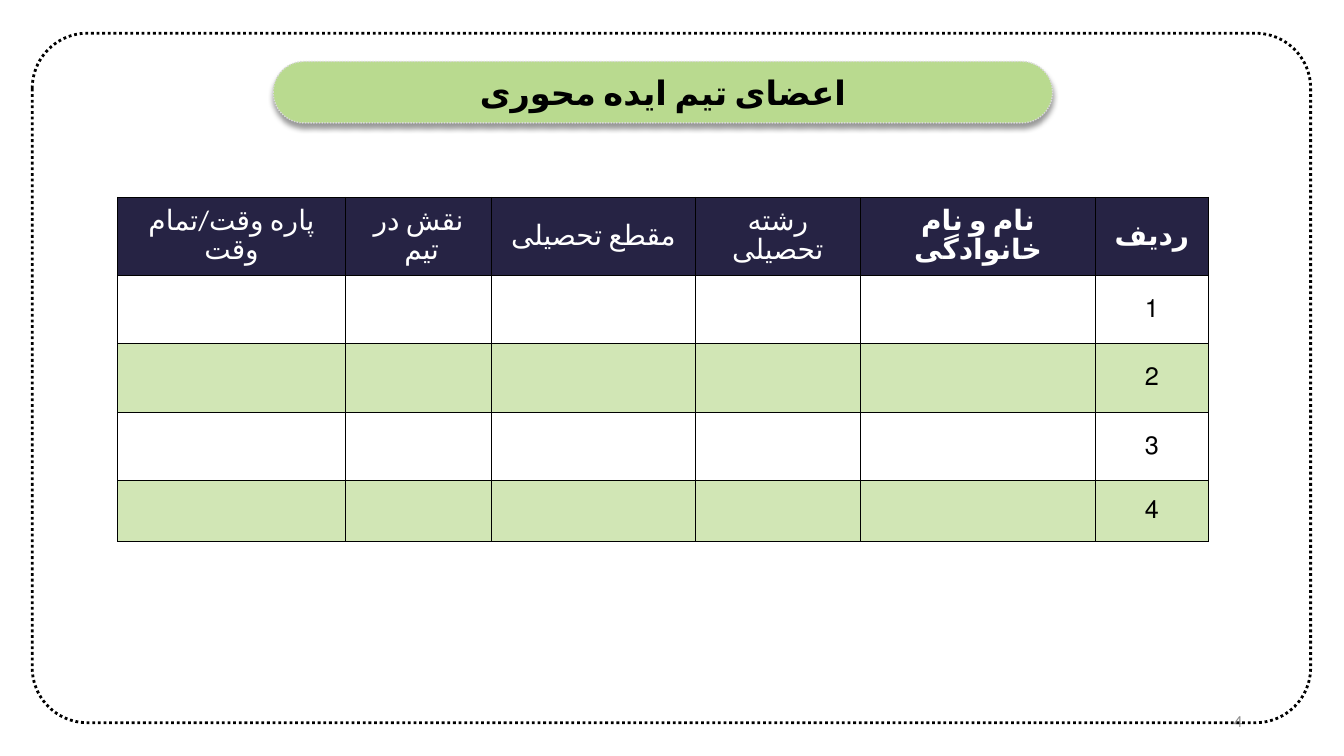
from dataclasses import dataclass

import lxml.etree
import pptx
import pptx.dml.color
import pptx.enum.dml
import pptx.enum.shapes
import pptx.enum.text
import pptx.oxml
import pptx.oxml.ns
import pptx.util

RGBColor = pptx.dml.color.RGBColor
BLACK = RGBColor(0x00, 0x00, 0x00)
WHITE = RGBColor(0xFF, 0xFF, 0xFF)
GREY = RGBColor(0x8C, 0x8C, 0x8C)
SILVER = RGBColor(0xD9, 0xD9, 0xD9)
GREEN = RGBColor(0xB9, 0xDA, 0x8F)
PALE_GREEN = RGBColor(0xD1, 0xE6, 0xB5)
NAVY = RGBColor(0x26, 0x23, 0x44)

FONT = "Calibri"
SLIDE_WIDTH = pptx.util.Inches(13.33)
SLIDE_HEIGHT = pptx.util.Inches(7.5)
ALIGN = pptx.enum.text.PP_ALIGN
MIDDLE = pptx.enum.text.MSO_ANCHOR.MIDDLE
DRAWING_NS = pptx.oxml.ns.nsdecls("a")


@dataclass(frozen=True)
class Area:
    """A rectangle in percent of the slide's width and height."""
    left: float
    top: float
    width: float
    height: float

    def emu(self) -> tuple[int, int, int, int]:
        return across(self.left), down(self.top), across(self.width), down(self.height)


@dataclass(frozen=True)
class Column:
    heading: str
    width: float
    bold: bool = False


TITLE_AREA = Area(20.33, 8.13, 57.99, 8.13)
NUMBER_AREA = Area(70.67, 92.67, 22.51, 5.33)
FRAME_AREA = Area(2.4, 4.4, 95.12, 91.2)
TEAM_AREA = Area(8.75, 26.13, 81.16, 45.48)
COLUMNS = [
    Column("پاره وقت/تمام وقت", 16.95),
    Column("نقش در تیم ", 10.88),
    Column("مقطع تحصیلی", 15.15),
    Column("رشته تحصیلی", 12.3),
    Column("نام و نام خانوادگی", 17.48, bold=True),
    Column("ردیف", 8.4, bold=True),
]
ROW_HEIGHTS = [10.27, 9.07, 9.07, 9.07, 8]


def across(percent: float) -> int:
    return round(SLIDE_WIDTH * percent / 100)


def down(percent: float) -> int:
    return round(SLIDE_HEIGHT * percent / 100)


def write(frame, text: str, *, size: float, color=BLACK, bold: bool = False,
          align=ALIGN.CENTER, rtl: bool = True, spacing: float = 1.0,
          persian: bool = False) -> None:
    paragraph = frame.paragraphs[0]
    paragraph.alignment = align
    paragraph.line_spacing = spacing
    if rtl:
        paragraph._p.get_or_add_pPr().set("rtl", "1")
    run = paragraph.add_run()
    run.text = text
    run.font.name = FONT
    run.font.size = pptx.util.Pt(size)
    run.font.bold = bold
    run.font.color.rgb = color
    if persian:
        run.font._element.set("lang", "fa-IR")
        lxml.etree.SubElement(
            run.font._element, pptx.oxml.ns.qn("a:cs")).set("typeface", FONT)


def add_rounded(slide, area: Area, corner: float, line: RGBColor, line_width: float):
    shape = slide.shapes.add_shape(
        pptx.enum.shapes.MSO_SHAPE.ROUNDED_RECTANGLE, *area.emu())
    shape.adjustments[0] = corner
    shape.shadow.inherit = False
    shape.fill.background()
    shape.line.color.rgb = line
    shape.line.width = pptx.util.Pt(line_width)
    shape.line.dash_style = pptx.enum.dml.MSO_LINE.ROUND_DOT
    return shape


def add_title(slide) -> None:
    banner = add_rounded(slide, TITLE_AREA, 0.5, SILVER, 1)
    banner.fill.solid()
    banner.fill.fore_color.rgb = GREEN
    # Soft shadow straight below
    effects = banner._element.spPr.find(pptx.oxml.ns.qn("a:effectLst"))
    effects.append(pptx.oxml.parse_xml(
        f'<a:outerShdw {DRAWING_NS} blurRad="50800" dist="38100" dir="5400000" '
        f'rotWithShape="0"><a:srgbClr val="{BLACK}"><a:alpha val="40000"/>'
        '</a:srgbClr></a:outerShdw>'))
    # Title text in front of its banner
    title = slide.shapes.title
    title.left, title.top, title.width, title.height = TITLE_AREA.emu()
    banner._element.addnext(title._element)
    title.text_frame.word_wrap = True
    title.text_frame.vertical_anchor = MIDDLE
    write(title.text_frame, "اعضای تیم ایده محوری", size=24, bold=True, persian=True)


def style_cell(cell, fill: RGBColor) -> None:
    cell.vertical_anchor = MIDDLE
    properties = cell._tc.get_or_add_tcPr()
    for side in ("lnL", "lnR", "lnT", "lnB"):
        properties.append(pptx.oxml.parse_xml(
            f'<a:{side} {DRAWING_NS} w="{pptx.util.Pt(1)}"><a:solidFill>'
            f'<a:srgbClr val="{BLACK}"/></a:solidFill></a:{side}>'))
    cell.fill.solid()
    cell.fill.fore_color.rgb = fill


def add_team_table(slide) -> None:
    team = slide.shapes.add_table(len(ROW_HEIGHTS), len(COLUMNS), *TEAM_AREA.emu()).table
    for row, height in zip(team.rows, ROW_HEIGHTS):
        row.height = down(height)
    for index, column in enumerate(COLUMNS):
        team.columns[index].width = across(column.width)
        heading = team.cell(0, index)
        style_cell(heading, NAVY)
        write(heading.text_frame, column.heading, size=20, color=WHITE,
              bold=column.bold, spacing=0.85, persian=True)
        for member in range(1, len(ROW_HEIGHTS)):
            style_cell(team.cell(member, index), WHITE if member % 2 else PALE_GREEN)
    # Member numbers in the last column
    for member in range(1, len(ROW_HEIGHTS)):
        write(team.cell(member, len(COLUMNS) - 1).text_frame, str(member), size=18)


def add_page_number(slide) -> None:
    page_number = slide.shapes.add_textbox(*NUMBER_AREA.emu()).text_frame
    page_number.word_wrap = True
    page_number.vertical_anchor = MIDDLE
    write(page_number, "4", size=12, color=GREY, align=ALIGN.RIGHT, rtl=False)


def main() -> None:
    deck = pptx.Presentation()
    deck.slide_width, deck.slide_height = SLIDE_WIDTH, SLIDE_HEIGHT
    slide = deck.slides.add_slide(deck.slide_layouts.get_by_name("Title Only"))
    add_page_number(slide)
    add_title(slide)
    add_team_table(slide)
    # Dotted frame around the slide
    add_rounded(slide, FRAME_AREA, 0.08, BLACK, 2)
    deck.save("out.pptx")


if __name__ == "__main__":
    main()
